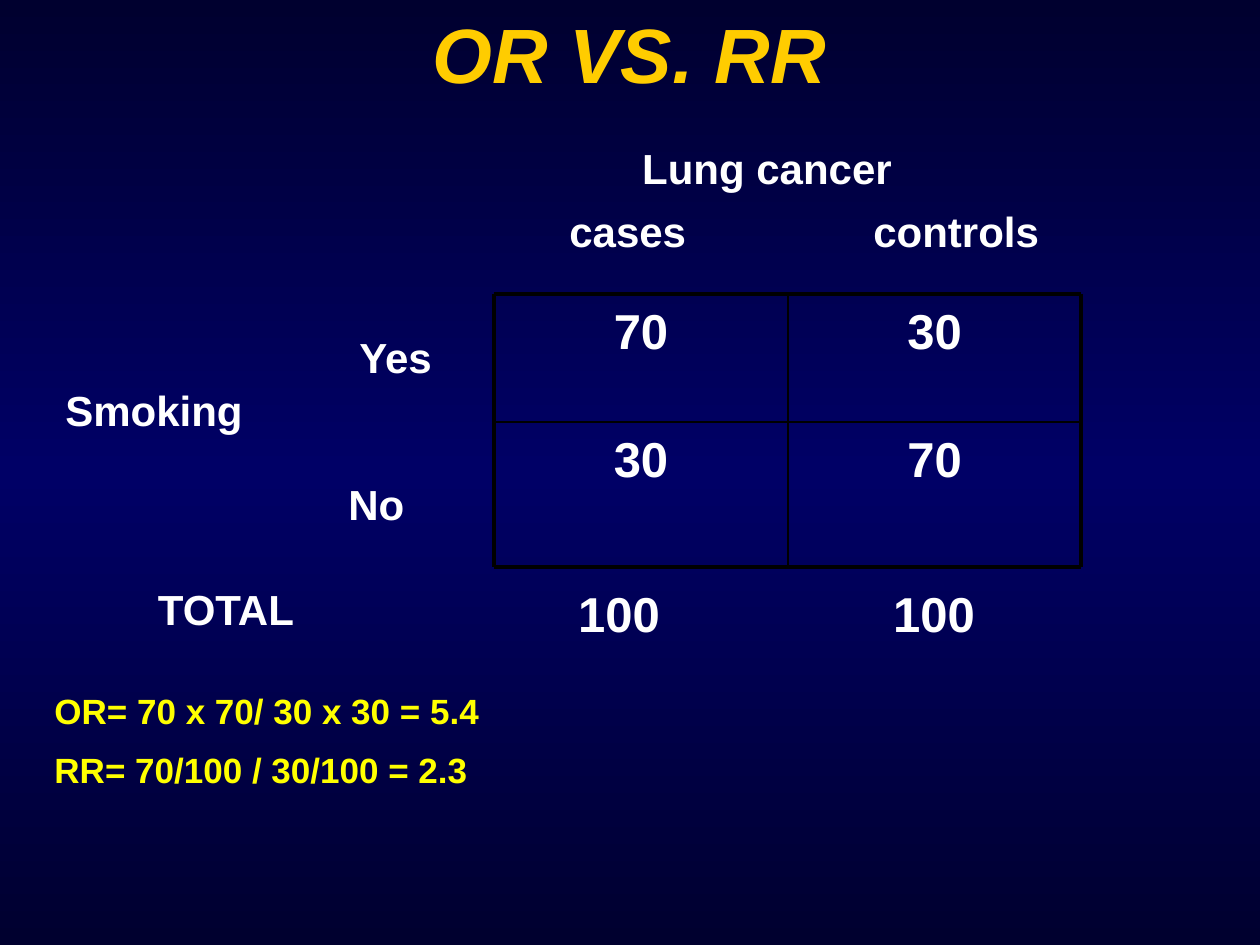
from copy import deepcopy

from pptx import Presentation
from pptx.dml.color import RGBColor
from pptx.enum.shapes import MSO_CONNECTOR
from pptx.enum.text import MSO_ANCHOR, PP_ALIGN
from pptx.oxml.ns import qn
from pptx.util import Emu, Pt
from lxml import etree

LEFT, CENTER = PP_ALIGN.LEFT, PP_ALIGN.CENTER
TOP, MIDDLE = MSO_ANCHOR.TOP, MSO_ANCHOR.MIDDLE
STRAIGHT = MSO_CONNECTOR.STRAIGHT

PX = 914400 / 126
WIDTH, HEIGHT = 1260, 945
COLORS = {
    "edge": "00002F", "middle": "000066", "title": "FFCC00",
    "text": "FFFFFF", "result": "FFFF00", "rule": "000000",
}

# Text styles
STYLES = {
    "title": {"size": Pt(44), "bold": True, "italic": True},
    "label": {"size": Pt(24), "bold": True},
    "count": {"size": Pt(28), "bold": True},
    "result": {"size": Pt(20), "bold": True},
}

# Content: counts by smoking (rows) and lung cancer (columns)
TITLE = "OR VS. RR"
COUNTS = [["70", "30"], ["30", "70"]]
LABELS = [  # text, left, top, width, alignment
    ("Lung cancer", 620, 136, 294, CENTER),
    ("Smoking", 53, 378, 252, LEFT),
    ("Yes", 347, 325, 105, LEFT),
    ("No", 336, 472, 105, LEFT),
    ("cases", 557, 199, 199, LEFT),
    ("controls", 861, 199, 199, LEFT),
    ("TOTAL", 84, 577, 284, CENTER),
]
TOTALS = [("100", 514), ("100", 829)]
RESULTS = ["OR= 70 x 70/ 30 x 30 = 5.4", "RR= 70/100 / 30/100 = 2.3"]

# Grid lines of the two-by-two table
COLUMNS = [494, 788, 1081]
ROWS = [294, 422, 567]
OUTER, INNER = Pt(2.25), Pt(1)


def px(value):
    return Emu(round(value * PX))


def color(name):
    return RGBColor.from_string(COLORS[name])


def add_text(page, lines, frame, style, ink="text", align=CENTER, anchor=TOP):
    box = page.shapes.add_textbox(*map(px, frame))
    text = box.text_frame
    text.word_wrap = True
    text.vertical_anchor = anchor
    for index, line in enumerate(lines):
        para = text.paragraphs[0] if index == 0 else text.add_paragraph()
        para.alignment = align
        if index:
            para.space_before = Pt(10)
        span = para.add_run()
        span.text = line
        span.font.name = "Arial"
        span.font.color.rgb = color(ink)
        for name, value in STYLES[style].items():
            setattr(span.font, name, value)


def add_rule(page, x1, y1, x2, y2, width):
    rule = page.shapes.add_connector(STRAIGHT, *map(px, (x1, y1, x2, y2)))
    rule.line.color.rgb = color("rule")
    rule.line.width = width
    etree.SubElement(rule._element.spPr, qn("a:effectLst"))


def fill_background(page):
    fill = page.background.fill
    fill.gradient()
    fill.gradient_angle = 270
    stop_list = next(page._element.iter(qn("a:gsLst")))
    stop_list.append(deepcopy(stop_list[0]))
    stops = [(0, "edge"), (0.5, "middle"), (1, "edge")]
    for stop, (position, name) in zip(fill.gradient_stops, stops):
        stop.position = position
        stop.color.rgb = color(name)


def main():
    deck = Presentation()
    deck.slide_width, deck.slide_height = px(WIDTH), px(HEIGHT)
    page = deck.slides.add_slide(deck.slide_layouts[6])
    fill_background(page)

    # Title
    add_text(page, [TITLE], (63, 0, 1134, 105), "title", "title", anchor=MIDDLE)

    # Counts in the grid cells
    for counts, top, bottom in zip(COUNTS, ROWS, ROWS[1:]):
        for count, left, right in zip(counts, COLUMNS, COLUMNS[1:]):
            add_text(page, [count], (left, top, right - left, bottom - top), "count")

    # Grid lines, heavier on the outside
    for y in ROWS:
        width = INNER if y == ROWS[1] else OUTER
        add_rule(page, COLUMNS[0], y, COLUMNS[-1], y, width)
    for x in COLUMNS:
        width = INNER if x == COLUMNS[1] else OUTER
        add_rule(page, x, ROWS[0], x, ROWS[-1], width)

    # Labels and totals
    for label, left, top, width, align in LABELS:
        add_text(page, [label], (left, top, width, 63), "label", align=align)
    for total, left in TOTALS:
        add_text(page, [total], (left, 577, 210, 72), "count")

    # Odds ratio and relative risk
    add_text(page, RESULTS, (42, 683, 672, 117), "result", "result", LEFT)

    deck.save("out.pptx")


if __name__ == "__main__":
    main()
